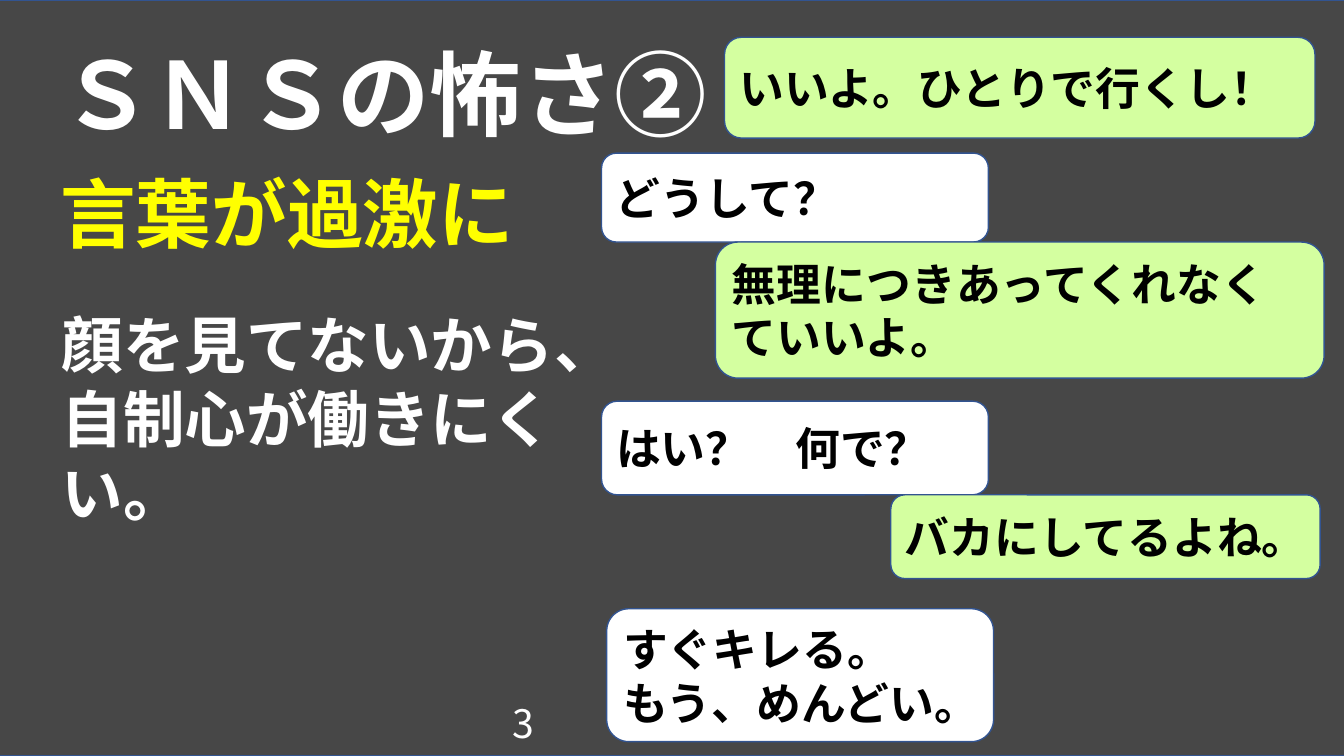
import pptx
import pptx.dml.color
import pptx.enum.shapes
import pptx.enum.text
import pptx.oxml.ns
import pptx.util
from lxml import etree

Cm = pptx.util.Cm
RGBColor = pptx.dml.color.RGBColor
MSO_SHAPE = pptx.enum.shapes.MSO_SHAPE
ANCHOR = pptx.enum.text.MSO_ANCHOR
ALIGN = pptx.enum.text.PP_ALIGN
qn = pptx.oxml.ns.qn

FONT = "Noto Sans CJK JP"
BLACK = RGBColor(0x00, 0x00, 0x00)
WHITE = RGBColor(0xFF, 0xFF, 0xFF)
YELLOW = RGBColor(0xFF, 0xFF, 0x00)
GREEN = RGBColor(0xD4, 0xFF, 0xA0)
OUTLINE = RGBColor(0x32, 0x54, 0x91)


def write_text(shape, text, size, color, bold=True, anchor=ANCHOR.TOP,
               align=ALIGN.LEFT, line_spacing=None, space_before=None):
    frame = shape.text_frame
    frame.word_wrap = True
    frame.vertical_anchor = anchor
    for index, line in enumerate(text.split("\n")):
        paragraph = frame.add_paragraph() if index else frame.paragraphs[0]
        paragraph.alignment = align
        paragraph.line_spacing = line_spacing
        paragraph.space_before = space_before
        run = paragraph.add_run()
        run.text = line
        run.font.name = FONT
        run.font.size = pptx.util.Pt(size)
        run.font.bold = bold
        run.font.color.rgb = color
        # Japanese glyphs take the East Asian typeface
        east_asian = etree.SubElement(run._r.get_or_add_rPr(), qn("a:ea"))
        east_asian.set("typeface", FONT)


def add_panel(preset, box, fill):
    shape = slide.shapes.add_shape(preset, *map(Cm, box))
    shape.shadow.inherit = False
    shape.fill.solid()
    shape.fill.fore_color.rgb = fill
    shape.line.color.rgb = OUTLINE
    shape.line.width = pptx.util.Pt(1)
    return shape


presentation = pptx.Presentation()
presentation.slide_width = Cm(33.87)
presentation.slide_height = Cm(19.05)
slide = presentation.slides.add_slide(presentation.slide_layouts[6])

# Translucent dark backdrop
backdrop = add_panel(MSO_SHAPE.RECTANGLE, (-0.05, 0, 33.96, 19.05), BLACK)
backdrop_color = backdrop.fill._xPr.find(".//" + qn("a:srgbClr"))
etree.SubElement(backdrop_color, qn("a:alpha")).set("val", "72000")

# Title, explanation, subtitle and page number
captions = [
    ((1.27, 0.53, 17.42, 3.35), "ＳＮＳの怖さ②",
     dict(size=66, color=WHITE, anchor=ANCHOR.BOTTOM, line_spacing=0.9)),
    ((1.3, 7.62, 14, 5.89), "顔を見てないから、自制心が働きにくい。",
     dict(size=44, color=WHITE)),
    ((1.27, 4.34, 12.45, 2.49), "言葉が過激に",
     dict(size=54, color=YELLOW, line_spacing=0.9,
          space_before=pptx.util.Pt(10))),
    ((6.1, 17.7, 7.62, 1.02), "3",
     dict(size=28, color=WHITE, bold=False, anchor=ANCHOR.MIDDLE,
          align=ALIGN.RIGHT)),
]
for box, text, text_format in captions:
    write_text(slide.shapes.add_textbox(*map(Cm, box)), text, **text_format)

# Chat bubbles: green and white speakers take turns
bubbles = [
    ((18.26, 0.94, 14.88, 2.54), "いいよ。ひとりで行くし！"),
    ((15.16, 3.86, 9.75, 2.24), "どうして？"),
    ((18.03, 6.1, 15.34, 3.43), "無理につきあってくれなくていいよ。"),
    ((15.16, 10.11, 9.75, 2.36), "はい？　何で？"),
    ((22.45, 12.47, 10.82, 2.11), "バカにしてるよね。"),
    ((15.29, 15.34, 9.75, 3.35), "すぐキレる。\nもう、めんどい。"),
]
for index, (box, text) in enumerate(bubbles):
    bubble = add_panel(MSO_SHAPE.FLOWCHART_ALTERNATE_PROCESS, box,
                       WHITE if index % 2 else GREEN)
    write_text(bubble, text, size=32, color=BLACK, anchor=ANCHOR.MIDDLE)

presentation.save("out.pptx")
